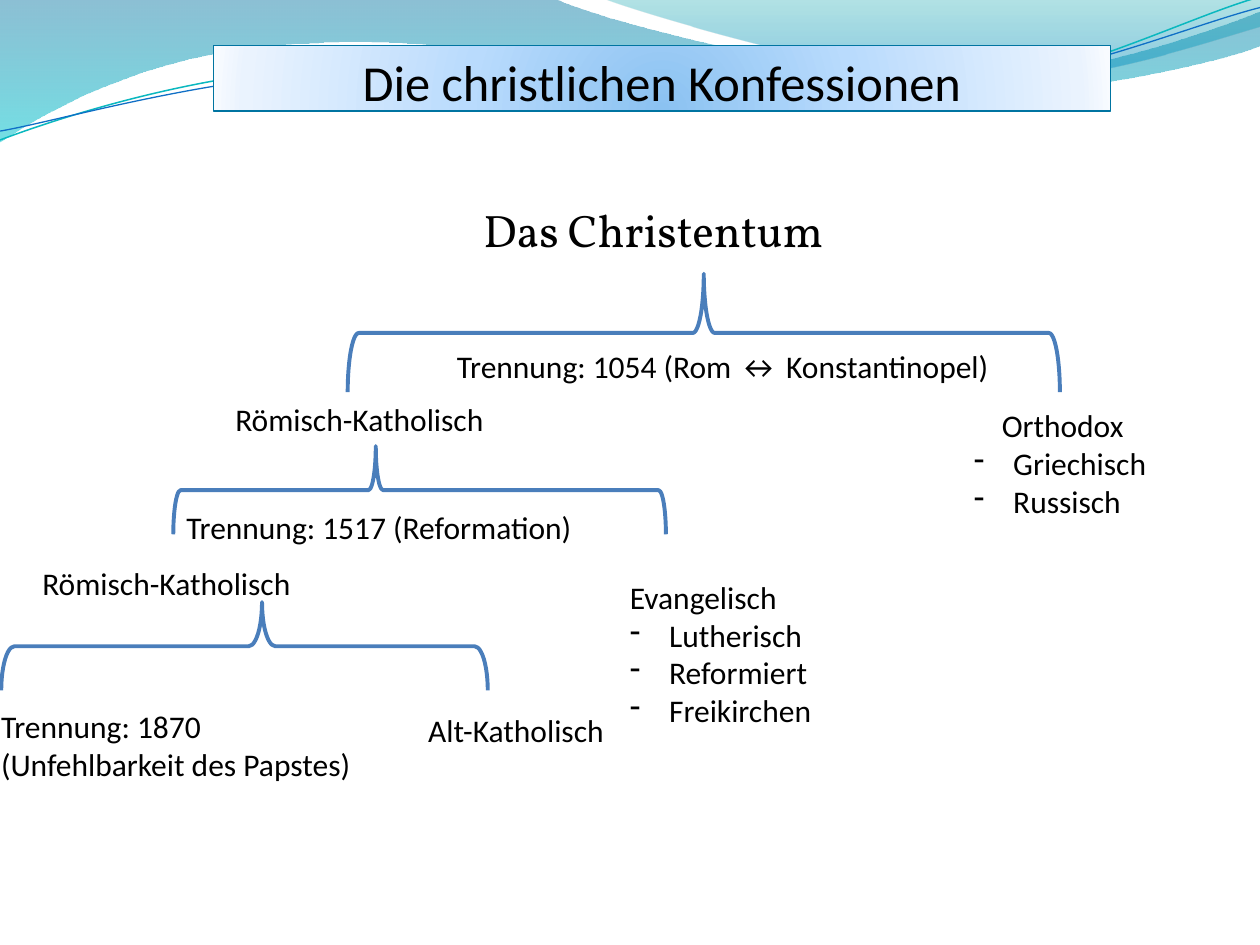
import lxml.etree
import pptx
import pptx.dml.color
import pptx.enum.shapes
import pptx.enum.text
import pptx.oxml.ns
import pptx.util

Pt = pptx.util.Pt
RGBColor = pptx.dml.color.RGBColor
Shapes = pptx.enum.shapes.MSO_SHAPE
Align = pptx.enum.text.PP_ALIGN
Anchor = pptx.enum.text.MSO_ANCHOR
qn = pptx.oxml.ns.qn

BLACK = RGBColor(0x00, 0x00, 0x00)
BRACE_BLUE = RGBColor(0x4A, 0x7E, 0xBB)
DEEP_BLUE = RGBColor(0x00, 0x74, 0xA1)
TURQUOISE = RGBColor(0x00, 0xC6, 0xCF)
TEAL = RGBColor(0x00, 0xA1, 0xA9)
SEA_BLUE = RGBColor(0x00, 0x8B, 0xBF)
LINE_TEAL = RGBColor(0x0A, 0xB8, 0xBF)
LINE_BLUE = RGBColor(0x0F, 0x6F, 0xC6)
TITLE_STOPS = [
    (0, RGBColor(0x8B, 0xC2, 0xF1), 100),
    (43, RGBColor(0xB9, 0xDB, 0xFD), 100),
    (93, RGBColor(0xEA, 0xF3, 0xFE), 100),
    (100, RGBColor(0xF8, 0xFB, 0xFF), 100),
]

LABEL_FONT = {"name": "Calibri", "size": Pt(18)}
BULLET_INDENT = 22.5

# A wave is a start point, then tuples of one point (line) or three (curve).
WAVES = [
    ([(0, 0), ((317, -0.7),), ((343, 12.2), (478, 45.4), (546, 45.4)),
      ((614, 45.4), (690, 18.7), (720, 6.5)), ((720.7, 25.9),),
      ((708, 31.7), (626, 54.7), (537, 54)),
      ((448, 54), (275, 20.2), (185, 24.5)),
      ((93, 25.9), (33, 59.8), (-0.7, 81.4))],
     [(0, DEEP_BLUE, 45), (100, TURQUOISE, 55)]),
    ([(345, -0.7), ((366.5, 7.9), (491, 44.6), (553.7, 46.8)),
      ((616.3, 49.7), (692, 23), (720, 15.1)), ((720, 0),)],
     [(0, TEAL, 30), (80, SEA_BLUE, 45)]),
]
WAVE_LINES = [
    ([(0, 80), ((34.6, 67), (113.8, 41), (199.4, 37.4)),
      ((284.4, 33.8), (427, 64.1), (513.4, 57.6)),
      ((599.8, 51.1), (675.4, 10.8), (718.6, -1.4))],
     LINE_TEAL, 0.85),
    ([(0, 74.9), ((33.8, 69.1), (118, 43.9), (203.8, 40.3)),
      ((290.2, 36.7), (429.8, 60.5), (516.2, 54)),
      ((601.9, 48.2), (677.5, 15.1), (720, 4.3))],
     LINE_BLUE, 0.75),
]

# kind, rotation, left, top, width, height, bend, position of the tip
BRACES = [
    (Shapes.RIGHT_BRACE, 270, 198.7, 156.4, 407, 67.7, 0.093, 0.5),
    (Shapes.RIGHT_BRACE, 270, 99, 254.9, 281.5, 50.4, 0.083, 0.411),
    (Shapes.LEFT_BRACE, 90, 0.7, 344.1, 278, 50.4, 0.15, 0.464),
]

# left, top, width, height, heading lines, bulleted lines, heading indent
LABELS = [
    (17.1, 318.6, 164, 29, ["Römisch-Katholisch"], [], 0),
    (549.4, 228.6, 128, 117, ["Orthodox"], ["Griechisch", "Russisch"], 16),
    (213.8, 194.8, 377.3, 29,
     ["Trennung: 1054 (Rom ↔ Konstantinopel)"], [], 40.2),
    (99.4, 286.6, 304, 29, ["Trennung: 1517 (Reformation)"], [], 0),
    (352.8, 326.7, 136, 94, ["Evangelisch"],
     ["Lutherisch", "Reformiert", "Freikirchen"], 0),
    (-6.5, 400.3, 276, 51,
     ["Trennung: 1870", "(Unfehlbarkeit des Papstes)"], [], 0),
    (237.6, 402.5, 158, 29, ["Alt-Katholisch"], [], 0),
]
UPPER_CATHOLIC = (127.4, 225, 164, 29, ["Römisch-Katholisch"], [], 0)


def apply(target, values):
    for name, value in values.items():
        setattr(target, name, value)


def child(parent, tag, **attributes):
    values = {name: str(value) for name, value in attributes.items()}
    return lxml.etree.SubElement(parent, qn(tag), values)


def fill_gradient(shape, stops, radial=False):
    """Fill with (position, colour, opacity) stops, downwards or radially."""
    shape.fill.gradient()
    gradient = shape._element.spPr.find(qn("a:gradFill"))
    for old in list(gradient):
        gradient.remove(old)
    stop_list = child(gradient, "a:gsLst")
    for position, color, opacity in stops:
        stop = child(stop_list, "a:gs", pos=position * 1000)
        element = child(stop, "a:srgbClr", val=color)
        if opacity < 100:
            child(element, "a:alpha", val=opacity * 1000)
    if radial:
        focus = child(gradient, "a:path", path="circle")
        child(focus, "a:fillToRect", l=50000, t=130000, r=50000, b=-30000)
    else:
        child(gradient, "a:lin", ang=5400000, scaled=0)


def set_line(shape, color, width):
    shape.line.color.rgb = color
    shape.line.width = Pt(width)


def add_outline(page, outline, close):
    """Add a freeform whose three-point segments become Bézier curves."""
    start, *segments = outline
    points = [(Pt(x), Pt(y)) for segment in segments for x, y in segment]
    builder = page.shapes.build_freeform(Pt(start[0]), Pt(start[1]))
    builder.add_line_segments(points, close=close)
    shape = builder.convert_to_shape()
    shape.shadow.inherit = False
    lines = iter(list(shape._element.iter(qn("a:lnTo"))))
    for segment in segments:
        group = [next(lines) for _ in segment]
        if len(group) == 3:
            curve = lxml.etree.Element(qn("a:cubicBezTo"))
            group[0].addprevious(curve)
            for line in group:
                curve.append(line[0])
                line.getparent().remove(line)
    return shape


def add_waves(page):
    for outline, stops in WAVES:
        wave = add_outline(page, outline, True)
        fill_gradient(wave, stops)
        wave.line.fill.background()
    for outline, color, width in WAVE_LINES:
        wave = add_outline(page, outline, False)
        wave.fill.background()
        set_line(wave, color, width)


def write(para, text, font):
    span = para.add_run()
    span.text = text
    apply(span.font, font)
    span.font.color.rgb = BLACK


def add_title(page, text):
    box = page.shapes.add_shape(
        Shapes.RECTANGLE, Pt(122), Pt(26.1), Pt(512.6), Pt(37.4))
    box.shadow.inherit = False
    fill_gradient(box, TITLE_STOPS, radial=True)
    set_line(box, DEEP_BLUE, 0.75)
    apply(box.text_frame, {
        "word_wrap": True, "vertical_anchor": Anchor.BOTTOM, "margin_left": 0,
        "margin_right": 0, "margin_top": Pt(3.6), "margin_bottom": 0})
    para = box.text_frame.paragraphs[0]
    para.alignment = Align.CENTER
    write(para, text, {"name": "Calibri", "size": Pt(28.8)})


def add_text_box(page, left, top, width, height):
    box = page.shapes.add_textbox(Pt(left), Pt(top), Pt(width), Pt(height))
    box.text_frame.word_wrap = True
    return box.text_frame


def add_heading(page, text):
    frame = add_text_box(page, 0, 76.3, 648, 381)
    apply(frame, {"margin_left": Pt(106), "margin_top": Pt(39.3)})
    para = frame.paragraphs[0]
    para.alignment = Align.CENTER
    write(para, text, {"name": "Vollkorn", "size": Pt(26)})


def add_label(page, left, top, width, height, headings, bullets, indent):
    frame = add_text_box(page, left, top, width, height)
    for index, text in enumerate(headings + bullets):
        para = frame.add_paragraph() if index else frame.paragraphs[0]
        properties = para._p.get_or_add_pPr()
        if index >= len(headings):
            properties.set("marL", str(Pt(BULLET_INDENT)))
            properties.set("indent", str(Pt(-BULLET_INDENT)))
            child(properties, "a:buFontTx")
            child(properties, "a:buChar", char="-")
        elif indent:
            properties.set("marL", str(Pt(indent)))
        write(para, text, LABEL_FONT)


def add_brace(page, kind, rotation, left, top, width, height, bend, tip):
    """Add an upward brace that covers the given area once it is turned."""
    shift = (width - height) / 2
    brace = page.shapes.add_shape(
        kind, Pt(left + shift), Pt(top - shift), Pt(height), Pt(width))
    brace.rotation = rotation
    brace.adjustments[0] = bend
    brace.adjustments[1] = tip
    brace.shadow.inherit = False
    brace.fill.background()
    set_line(brace, BRACE_BLUE, 2.25)


def main():
    deck = pptx.Presentation()
    apply(deck, {"slide_width": Pt(720), "slide_height": Pt(540)})
    page = deck.slides.add_slide(deck.slide_layouts[6])
    add_waves(page)
    add_title(page, "Die christlichen Konfessionen")
    add_heading(page, "Das Christentum")
    for label in LABELS:
        add_label(page, *label)
    for brace in BRACES:
        add_brace(page, *brace)
    add_label(page, *UPPER_CATHOLIC)
    deck.save("out.pptx")


if __name__ == "__main__":
    main()
